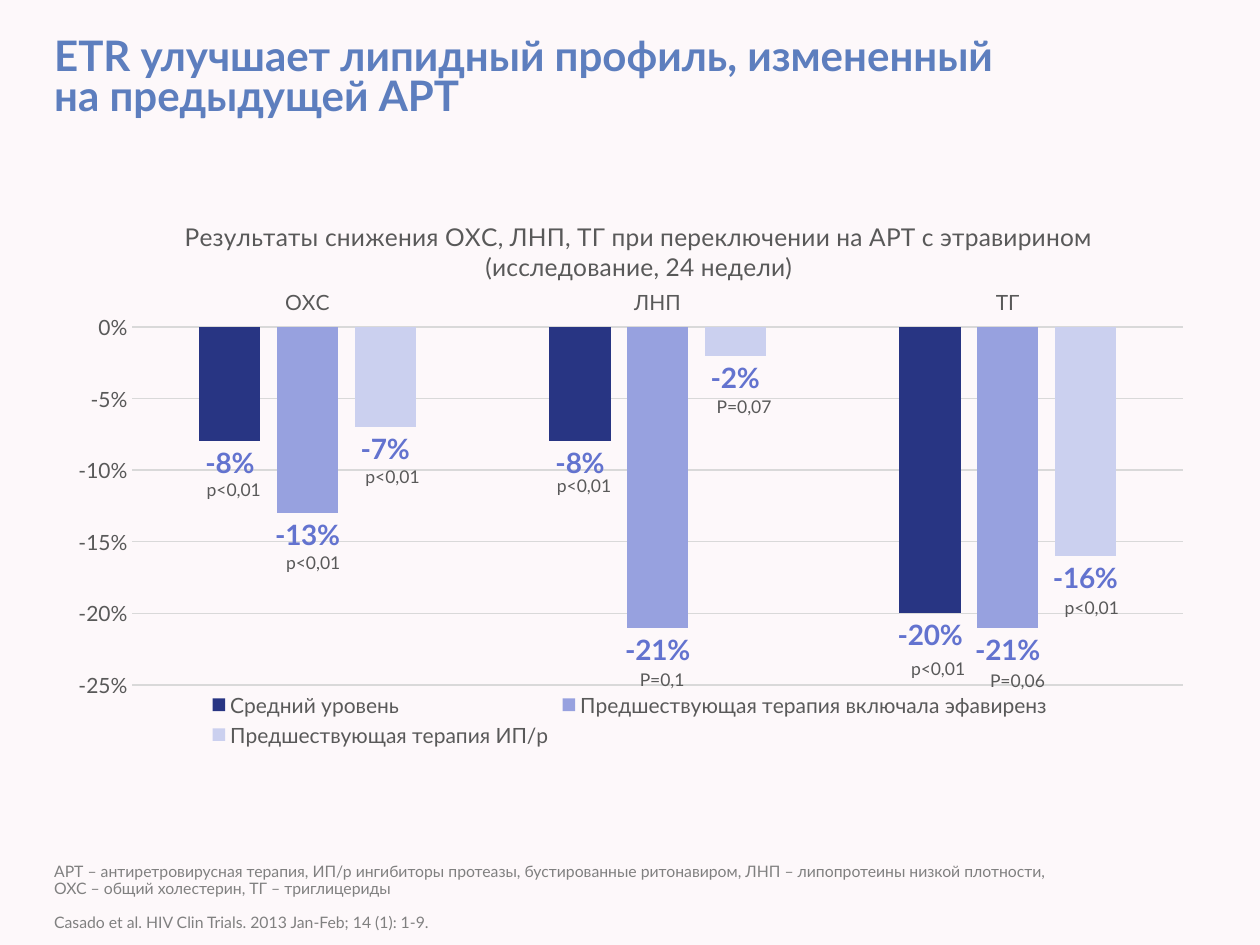
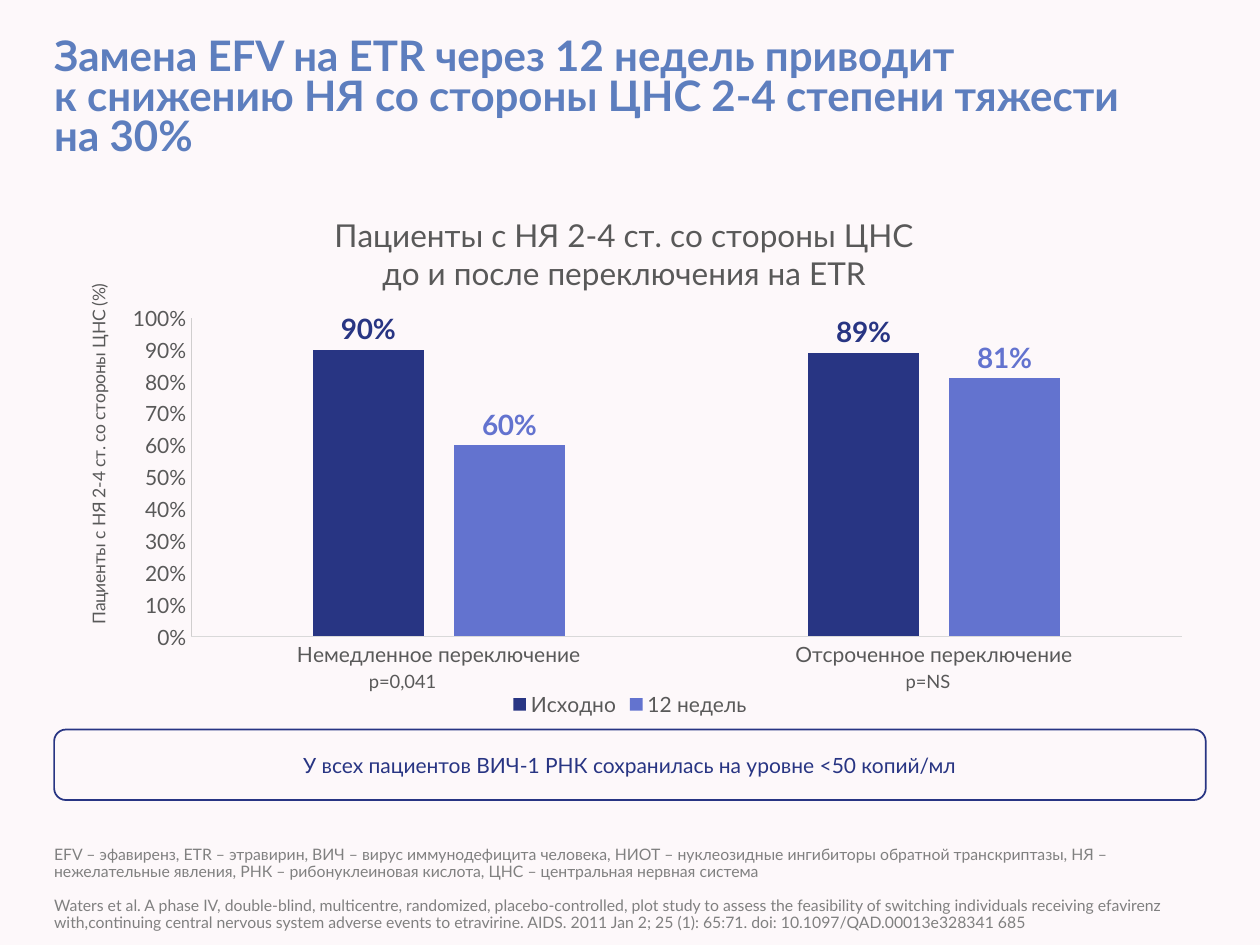
"""Build two slides on lipid and CNS outcomes after switching to etravirine."""
from lxml import etree
from pptx import Presentation
from pptx.chart.data import CategoryChartData
from pptx.dml.color import RGBColor
from pptx.enum.chart import XL_CHART_TYPE as ChartType, XL_LABEL_POSITION as LabelPosition
from pptx.enum.chart import XL_LEGEND_POSITION as LegendPosition, XL_TICK_MARK as TickMark
from pptx.enum.chart import XL_TICK_LABEL_POSITION as TickLabels
from pptx.enum.shapes import MSO_SHAPE as Shape
from pptx.enum.text import MSO_ANCHOR as Anchor, MSO_AUTO_SIZE as AutoSize, PP_ALIGN as Align
from pptx.oxml.ns import qn
from pptx.util import Inches, Pt

FONT = "Lato"
BACKGROUND = RGBColor(0xFD, 0xF8, 0xFA)
TITLE_BLUE = RGBColor(0x5D, 0x7E, 0xBE)
NAVY = RGBColor(0x28, 0x35, 0x83)
VIOLET = RGBColor(0x63, 0x73, 0xCF)
LILAC = RGBColor(0x97, 0xA1, 0xDF)
PALE_LILAC = RGBColor(0xCB, 0xD0, 0xEF)
TEXT_GRAY = RGBColor(0x59, 0x59, 0x59)
FOOTER_GRAY = RGBColor(0x80, 0x80, 0x80)
GRID_GRAY = RGBColor(0xD9, 0xD9, 0xD9)
AXIS_GRAY = RGBColor(0xD0, 0xCE, 0xCE)
LEFT, WIDTH = Inches(0.43), Inches(9.14)


def write(frame, paragraphs, size, color, bold=False, align=Align.LEFT, spacing=None, gap=0):
    """Fill a text frame, one paragraph per string, with line breaks at newlines."""
    for number, text in enumerate(paragraphs):
        para = frame.add_paragraph() if number else frame.paragraphs[0]
        para.alignment = align
        if spacing:
            para.line_spacing = spacing
        if number and gap:
            para.space_before = Pt(gap)
        for line_number, line in enumerate(text.split("\n")):
            if line_number:
                para.add_line_break()
            span = para.add_run()
            span.text = line
            span.font.name, span.font.size, span.font.bold = FONT, Pt(size), bold
            span.font.color.rgb = color


def set_layout(parent, index, **values):
    """Give a chart part a manual layout in fractions of the chart."""
    for old in parent.findall(qn("c:layout")):
        parent.remove(old)
    layout = etree.Element(qn("c:layout"))
    manual = etree.SubElement(layout, qn("c:manualLayout"))
    if "w" in values:
        etree.SubElement(manual, qn("c:layoutTarget")).set("val", "inner")
    for key in ("x", "y"):
        etree.SubElement(manual, qn(f"c:{key}Mode")).set("val", "edge")
    for key, value in values.items():
        etree.SubElement(manual, qn(f"c:{key}")).set("val", str(value))
    parent.insert(index, layout)


SLIDES = [
    {
        "title": "ETR улучшает липидный профиль, измененный\nна предыдущей АРТ",
        "title_size": (9.29, 0.64),
        "footer": [
            "АРТ – антиретровирусная терапия, ИП/р ингибиторы протеазы, бустированные ритонавиром, "
            "ЛНП – липопротеины низкой плотности,\nОХС – общий холестерин, ТГ – триглицериды",
            "Casado et al. HIV Clin Trials. 2013 Jan-Feb; 14 (1): 1-9.",
        ],
        "chart_box": (1.53, 4.44),
        "chart_title": ["Результаты снижения ОХС, ЛНП, ТГ при переключении на АРТ с этравирином",
                        "(исследование, 24 недели)"],
        "chart_title_size": 14,
        "chart_title_place": {"x": 0.11, "y": 0.04},
        "plot_place": {"x": 0.068, "y": 0.24, "w": 0.912, "h": 0.64},
        "scale": (-0.25, 0, 0.05),
        "categories": ["ОХС", "ЛНП", "ТГ"],
        "series": [
            ("Средний уровень", (-0.08, -0.08, -0.2), NAVY, VIOLET),
            ("Предшествующая терапия включала эфавиренз", (-0.13, -0.21, -0.21), LILAC, VIOLET),
            ("Предшествующая терапия ИП/р", (-0.07, -0.02, -0.16), PALE_LILAC, VIOLET),
        ],
        "note_size": 10,
        "notes": [
            ("p<0,01", 1.46, 3.75, 0.79), ("p<0,01", 2.09, 4.33, 0.79), ("p<0,01", 2.72, 3.65, 0.79),
            ("p<0,01", 4.24, 3.72, 0.79), ("p<0,01", 7.05, 5.17, 0.79), ("p<0,01", 8.27, 4.69, 0.79),
            ("P=0,06", 7.68, 5.27, 0.79), ("P=0,1", 4.86, 5.26, 0.79), ("P=0,07", 5.51, 3.09, 0.79),
        ],
    },
    {
        "title": "Замена EFV на ETR через 12 недель приводит\n"
                 "к снижению НЯ со стороны ЦНС 2-4 степени тяжести на 30%",
        "title_size": (8.62, 0.97),
        "footer": [
            "EFV – эфавиренз, ETR – этравирин, ВИЧ – вирус иммунодефицита человека, "
            "НИОТ – нуклеозидные ингибиторы обратной транскриптазы, НЯ – нежелательные явления, "
            "РНК – рибонуклеиновая кислота, ЦНС – центральная нервная система",
            "Waters et al. A phase IV, double-blind, multicentre, randomized, placebo-controlled, "
            "plot study to assess the feasibility of switching individuals receiving efavirenz "
            "with,continuing central nervous system adverse events to etravirine. "
            "AIDS. 2011 Jan 2; 25 (1): 65:71. doi: 10.1097/QAD.00013e328341 685",
        ],
        "chart_box": (1.47, 4.26),
        "chart_title": ["Пациенты с НЯ 2-4 ст. со стороны ЦНС", "до и после переключения на ETR"],
        "chart_title_size": 18,
        "chart_title_place": {"x": 0.24, "y": 0.045},
        "plot_place": {"x": 0.119, "y": 0.247, "w": 0.86, "h": 0.594},
        "scale": (0, 1, 0.1),
        "categories": ["Немедленное переключение", "Отсроченное переключение"],
        "series": [
            ("Исходно", (0.9, 0.89), NAVY, NAVY),
            ("12 недель", (0.6, 0.81), VIOLET, VIOLET),
        ],
        "axis_title": "Пациенты с НЯ 2-4 ст. со стороны ЦНС (%)",
        "note_size": 10.5,
        "notes": [("p=0,041", 2.8, 5.27, 0.79), ("p=NS", 7.05, 5.27, 0.63)],
        "callout": "У всех пациентов ВИЧ-1 РНК сохранилась на уровне <50 копий/мл",
    },
]

deck = Presentation()
deck.slide_width, deck.slide_height = Inches(10), Inches(7.5)
master_fill = deck.slide_master.background.fill
master_fill.solid()
master_fill.fore_color.rgb = BACKGROUND

for content in SLIDES:
    page = deck.slides.add_slide(deck.slide_layouts[5])

    title = page.shapes.title
    title.left, title.top = LEFT, Inches(0.31)
    title.width, title.height = [Inches(length) for length in content["title_size"]]
    footer = page.shapes.add_textbox(LEFT, Inches(6.6), WIDTH, Inches(0.8))
    for box, anchor in ((title, Anchor.TOP), (footer, Anchor.BOTTOM)):
        frame = box.text_frame
        frame.margin_left = frame.margin_right = frame.margin_top = frame.margin_bottom = 0
        frame.word_wrap, frame.auto_size, frame.vertical_anchor = True, AutoSize.NONE, anchor
    write(title.text_frame, [content["title"]], 24, TITLE_BLUE, bold=True, spacing=0.8)
    write(footer.text_frame, content["footer"], 9, FOOTER_GRAY, spacing=0.9, gap=10)

    data = CategoryChartData(number_format="0%")
    data.categories = content["categories"]
    for name, values, fill_color, label_color in content["series"]:
        data.add_series(name, values)
    top, height = content["chart_box"]
    chart = page.shapes.add_chart(
        ChartType.COLUMN_CLUSTERED, LEFT, Inches(top), WIDTH, Inches(height), data).chart
    chart.font.name, chart.font.size = FONT, Pt(12)
    chart.font.color.rgb = TEXT_GRAY
    chart.has_title = True
    write(chart.chart_title.text_frame, content["chart_title"], content["chart_title_size"],
          TEXT_GRAY, align=Align.CENTER)
    chart.has_legend = True
    chart.legend.position = LegendPosition.BOTTOM
    chart.legend.include_in_layout = False

    plot = chart.plots[0]
    plot.gap_width, plot.overlap, plot.vary_by_categories = 219, -27, False
    for series, (name, values, fill_color, label_color) in zip(plot.series, content["series"]):
        series.invert_if_negative = False
        series.format.fill.solid()
        series.format.fill.fore_color.rgb = fill_color
        labels = series.data_labels
        labels.show_value, labels.position = True, LabelPosition.OUTSIDE_END
        labels.number_format, labels.number_format_is_linked = "0%", False
        labels.font.name, labels.font.size, labels.font.bold = FONT, Pt(16), True
        labels.font.color.rgb = label_color

    category_axis, value_axis = chart.category_axis, chart.value_axis
    for axis in (category_axis, value_axis):
        axis.major_tick_mark = axis.minor_tick_mark = TickMark.NONE
        axis.format.line.width = Pt(0.75)
    category_axis.format.line.color.rgb = GRID_GRAY
    value_axis.minimum_scale, value_axis.maximum_scale, value_axis.major_unit = content["scale"]
    value_axis.tick_labels.number_format = "0%"
    value_axis.tick_labels.number_format_is_linked = False
    if "axis_title" in content:
        value_axis.has_major_gridlines = False
        value_axis.format.line.color.rgb = AXIS_GRAY
        write(value_axis.axis_title.text_frame, [content["axis_title"]], 10, TEXT_GRAY,
              align=Align.CENTER)
        chart_space = chart._chartSpace
        set_layout(chart_space.find(f".//{qn('c:valAx')}/{qn('c:title')}"), 1, x=0.025, y=0.177)
    else:
        category_axis.tick_label_position = TickLabels.HIGH
        value_axis.format.line.fill.background()
        grid_line = value_axis.major_gridlines.format.line
        grid_line.color.rgb, grid_line.width = GRID_GRAY, Pt(0.75)
    chart_root = chart._chartSpace.find(qn("c:chart"))
    set_layout(chart_root.find(qn("c:title")), 1, **content["chart_title_place"])
    set_layout(chart_root.find(qn("c:plotArea")), 0, **content["plot_place"])

    if "callout" in content:
        callout = page.shapes.add_shape(
            Shape.ROUNDED_RECTANGLE, LEFT, Inches(5.79), WIDTH, Inches(0.56))
        callout.shadow.inherit = False
        callout.fill.background()
        callout.line.color.rgb, callout.line.width = NAVY, Pt(1)
        callout.text_frame.vertical_anchor = Anchor.MIDDLE
        write(callout.text_frame, [content["callout"]], 12, NAVY, align=Align.CENTER)

    for text, left, top, width in content["notes"]:
        note = page.shapes.add_textbox(Inches(left), Inches(top), Inches(width), Inches(0.27))
        note.text_frame.word_wrap = True
        write(note.text_frame, [text], content["note_size"], TEXT_GRAY, align=Align.CENTER)

deck.save("out.pptx")
